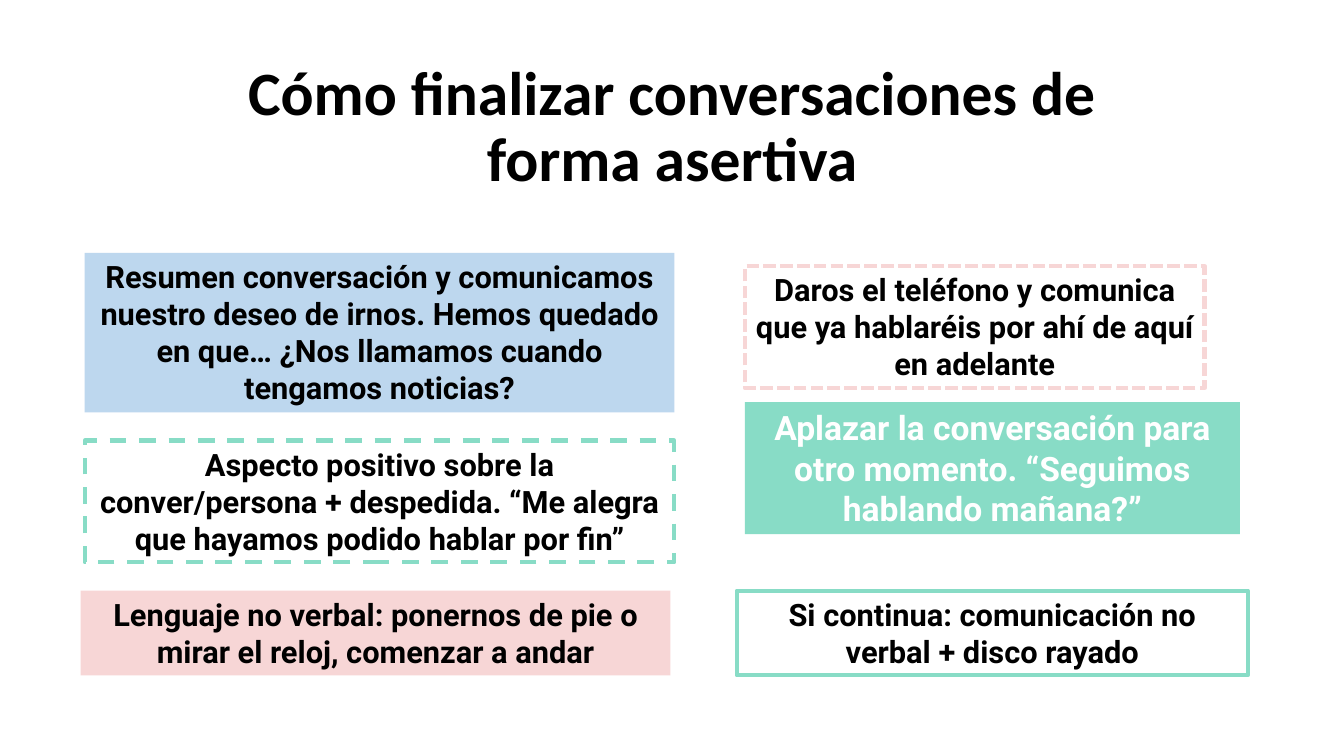
"""Build a slide on ending conversations assertively."""
from pptx import Presentation
from pptx.dml.color import RGBColor
from pptx.enum.dml import MSO_LINE_DASH_STYLE as Dash
from pptx.enum.shapes import MSO_SHAPE as Shape
from pptx.enum.text import MSO_ANCHOR as Anchor, MSO_AUTO_SIZE as AutoSize, PP_ALIGN as Align
from pptx.util import Pt

COLORS = {
    "black": "000000",
    "white": "FFFFFF",
    "mint": "88DCC6",
    "rose": "F7D6D6",
    "sky": "BDD7EE",
}


def rgb(name):
    return RGBColor.from_string(COLORS[name])


def place(shape, left, top, width, height):
    shape.left, shape.top = Pt(left), Pt(top)
    shape.width, shape.height = Pt(width), Pt(height)


def write(frame, text, *, size=22, font="Roboto", color="black",
          anchor=Anchor.TOP, fit=AutoSize.SHAPE_TO_FIT_TEXT, spacing=1.0):
    frame.word_wrap = True
    frame.auto_size = fit
    frame.vertical_anchor = anchor
    para = frame.paragraphs[0]
    para.alignment = Align.CENTER
    para.line_spacing = spacing
    span = para.add_run()
    span.text = text
    span.font.name = font
    span.font.size = Pt(size)
    span.font.bold = True
    span.font.color.rgb = rgb(color)


def add_title(page, text, bounds):
    title = page.shapes.title
    place(title, *bounds)
    write(title.text_frame, text, size=44, font="Calibri",
          anchor=Anchor.MIDDLE, fit=AutoSize.NONE, spacing=0.9)


def add_box(page, text, bounds, *, fill=None, line=None, dash=None, **text_format):
    box = page.shapes.add_shape(Shape.RECTANGLE, *map(Pt, bounds))
    box.shadow.inherit = False
    if fill:
        box.fill.solid()
        box.fill.fore_color.rgb = rgb(fill)
    else:
        box.fill.background()
    if line:
        box.line.color.rgb = rgb(line)
        box.line.width = Pt(3)
        if dash:
            box.line.dash_style = dash
    else:
        box.line.fill.background()
    write(box.text_frame, text, **text_format)


def main():
    deck = Presentation()
    deck.slide_width, deck.slide_height = Pt(960), Pt(540)
    page = deck.slides.add_slide(deck.slide_layouts[5])

    add_title(page, "Cómo finalizar conversaciones de forma asertiva",
              (165.6, 39.6, 629.3, 104.4))

    add_box(page, "Resumen conversación y comunicamos nuestro deseo de irnos. "
            "Hemos quedado en que… ¿Nos llamamos cuando tengamos noticias?",
            (60.5, 180.7, 421.2, 113.8), fill="sky")
    add_box(page, "Aspecto positivo sobre la conver/persona + despedida. "
            "“Me alegra que hayamos podido hablar por fin”",
            (60.5, 314.6, 421.2, 87.1), line="mint", dash=Dash.DASH)
    add_box(page, "Lenguaje no verbal: ponernos de pie o mirar el reloj, "
            "comenzar a andar",
            (57.6, 421.9, 421.2, 60.5), fill="rose")

    add_box(page, "Daros el teléfono y comunica que ya hablaréis por ahí "
            "de aquí en adelante",
            (532.1, 190.1, 328.3, 87.1), line="rose", dash=Dash.SQUARE_DOT)
    add_box(page, "Aplazar la conversación para otro momento. "
            "“Seguimos hablando mañana?”",
            (532.1, 287.3, 353.5, 94.3), fill="mint", size=24, color="white")
    add_box(page, "Si continua: comunicación no verbal + disco rayado",
            (526.3, 421.9, 365, 60.5), line="mint")

    deck.save("out.pptx")


if __name__ == "__main__":
    main()
